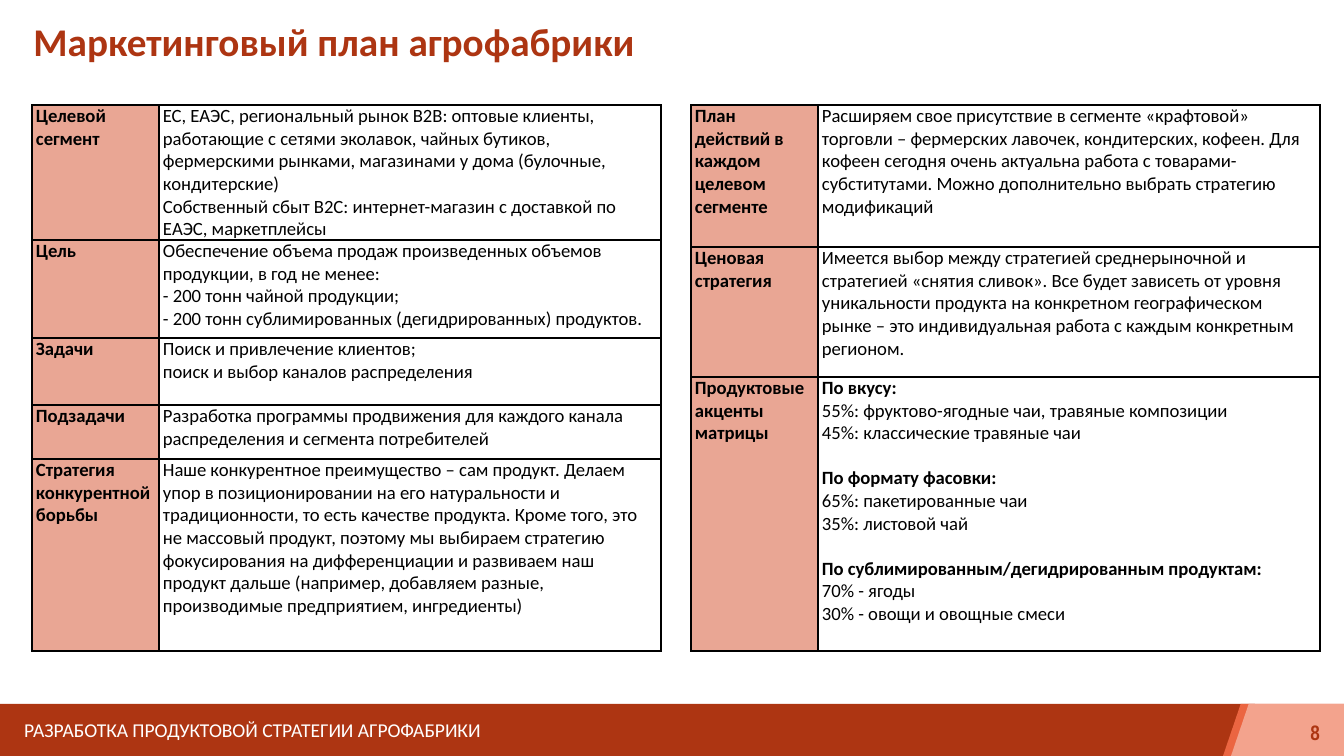
from lxml.etree import SubElement
from pptx import Presentation
from pptx.dml.color import RGBColor
from pptx.enum.shapes import MSO_SHAPE
from pptx.enum.text import MSO_ANCHOR, MSO_AUTO_SIZE, PP_ALIGN
from pptx.oxml import parse_xml
from pptx.oxml.ns import nsdecls
from pptx.util import Pt

PX = 914400 / 134.4
RUST, ORANGE, SALMON, LABEL = "AD3512", "EB6541", "F3A38D", "E9A694"
BLACK, WHITE = "000000", "FFFFFF"


class Heading(str):
    """A bold line inside a table cell."""


# Content
TITLE = "Маркетинговый план агрофабрики"
FOOTER = "РАЗРАБОТКА ПРОДУКТОВОЙ СТРАТЕГИИ АГРОФАБРИКИ"
PAGE = "8"

# Each row: height in px, label, paragraphs
GOAL_ROWS = [
    (135, "Целевой сегмент", [
        "ЕС, ЕАЭС, региональный рынок B2B: оптовые клиенты, работающие с сетями "
        "эколавок, чайных бутиков, фермерскими рынками, магазинами у дома "
        "(булочные, кондитерские)",
        "Собственный сбыт B2C: интернет-магазин с доставкой по ЕАЭС, маркетплейсы"]),
    (98, "Цель", [
        "Обеспечение объема продаж произведенных объемов продукции, в год не менее:",
        "- 200 тонн чайной продукции;",
        "- 200 тонн сублимированных (дегидрированных) продуктов."]),
    (67, "Задачи", [
        "Поиск и привлечение клиентов;",
        "поиск и выбор каналов распределения"]),
    (54, "Подзадачи", [
        "Разработка программы продвижения для каждого канала распределения "
        "и сегмента потребителей"]),
    (192, "Стратегия конкурентной борьбы", [
        "Наше конкурентное преимущество – сам продукт. Делаем упор в "
        "позиционировании на его натуральности и традиционности, то есть качестве "
        "продукта. Кроме того, это не массовый продукт, поэтому мы выбираем "
        "стратегию фокусирования на дифференциации и развиваем наш продукт дальше "
        "(например, добавляем разные, производимые предприятием, ингредиенты)"]),
]
ACTION_ROWS = [
    (142, "План действий в каждом целевом сегменте", [
        "Расширяем свое присутствие в сегменте «крафтовой» торговли – фермерских "
        "лавочек, кондитерских, кофеен. Для кофеен сегодня очень актуальна работа "
        "с товарами-субститутами. Можно дополнительно выбрать стратегию модификаций"]),
    (130, "Ценовая стратегия", [
        "Имеется выбор между стратегией среднерыночной и стратегией «снятия "
        "сливок». Все будет зависеть от уровня уникальности продукта на конкретном "
        "географическом рынке – это индивидуальная работа с каждым конкретным "
        "регионом."]),
    (274, "Продуктовые акценты матрицы", [
        Heading("По вкусу:"),
        "55%: фруктово-ягодные чаи, травяные композиции",
        "45%: классические травяные чаи",
        Heading("По формату фасовки:"),
        "65%: пакетированные чаи",
        "35%: листовой чай",
        Heading("По сублимированным/дегидрированным продуктам:"),
        "70% - ягоды",
        "30% - овощи и овощные смеси"]),
]

# Layout in px
TABLE_TOP = 105
COLUMNS = (127, 502)
TABLES = [(32, GOAL_ROWS), (691, ACTION_ROWS)]
BAR_TOP, BAR_HEIGHT = 704, 52


def px(*lengths):
    return [round(length * PX) for length in lengths]


def color(value):
    return RGBColor.from_string(value)


def add_run(paragraph, text, size, ink, bold=False, font="Calibri"):
    run = paragraph.add_run()
    run.text = text
    run.font.size, run.font.bold, run.font.name = Pt(size), bold, font
    run.font.color.rgb = color(ink)


def add_block(slide, kind, box, fill):
    shape = slide.shapes.add_shape(kind, *px(*box))
    shape.shadow.inherit = False
    shape.fill.solid()
    shape.fill.fore_color.rgb = color(fill)
    shape.line.fill.background()
    return shape


def add_label(slide, box):
    frame = slide.shapes.add_textbox(*px(*box)).text_frame
    frame.word_wrap = True
    frame.vertical_anchor = MSO_ANCHOR.MIDDLE
    return frame


def format_cell(cell, fill):
    cell.margin_left, cell.margin_right = px(4, 4)
    cell.margin_top = cell.margin_bottom = 0
    properties = cell._tc.get_or_add_tcPr()
    for side in ("lnL", "lnR", "lnT", "lnB"):
        border = parse_xml(f'<a:{side} {nsdecls("a")} w="{Pt(1)}"/>')
        solid = SubElement(border, border.tag.replace(side, "solidFill"))
        SubElement(solid, border.tag.replace(side, "srgbClr"), val=BLACK)
        properties.append(border)
    cell.fill.solid()
    cell.fill.fore_color.rgb = color(fill)


def fill_cell(cell, lines):
    frame = cell.text_frame
    for index, line in enumerate(lines):
        paragraph = frame.add_paragraph() if index else frame.paragraphs[0]
        heading = isinstance(line, Heading)
        if heading and index:
            paragraph.space_before = Pt(12)
        add_run(paragraph, line, 10, BLACK, heading)


def add_plan(slide, left, rows):
    height = sum(row[0] for row in rows)
    box = px(left, TABLE_TOP, sum(COLUMNS), height)
    table = slide.shapes.add_table(len(rows), len(COLUMNS), *box).table
    table.first_row = table.horz_banding = False
    for column, width in zip(table.columns, px(*COLUMNS)):
        column.width = width
    for index, (row_height, label, lines) in enumerate(rows):
        table.rows[index].height = px(row_height)[0]
        contents = [([Heading(label)], LABEL), (lines, WHITE)]
        for cell, (text, fill) in zip(table.rows[index].cells, contents):
            format_cell(cell, fill)
            fill_cell(cell, text)


def main():
    presentation = Presentation()
    presentation.slide_width, presentation.slide_height = px(1344, 756)
    slide = presentation.slides.add_slide(presentation.slide_layouts[5])

    # Title
    title = slide.shapes.title
    title.left, title.top, title.width, title.height = px(20, 20, 1300, 52)
    frame = title.text_frame
    frame.auto_size = MSO_AUTO_SIZE.NONE
    frame.vertical_anchor = MSO_ANCHOR.TOP
    paragraph = frame.paragraphs[0]
    paragraph.alignment = PP_ALIGN.LEFT
    paragraph.line_spacing = 0.8
    add_run(paragraph, TITLE, 21, RUST, True)

    # Footer bar with slanted page tab
    add_block(slide, MSO_SHAPE.RECTANGLE, (0, BAR_TOP, 1255, BAR_HEIGHT), RUST)
    for left, fill in ((1223, ORANGE), (1231, SALMON)):
        tab = add_block(slide, MSO_SHAPE.PARALLELOGRAM,
                        (left, BAR_TOP, 155, BAR_HEIGHT), fill)
        tab.adjustments[0] = 0.34
    footer = add_label(slide, (11, BAR_TOP, 1155, BAR_HEIGHT))
    add_run(footer.paragraphs[0], FOOTER, 10.5, WHITE)
    page = add_label(slide, (1279, 714, 54, 36))
    page.paragraphs[0].alignment = PP_ALIGN.RIGHT
    add_run(page.paragraphs[0], PAGE, 11.2, RUST, True, "Arial Narrow")

    # Marketing plan tables
    for left, rows in TABLES:
        add_plan(slide, left, rows)

    presentation.save("out.pptx")


if __name__ == "__main__":
    main()
